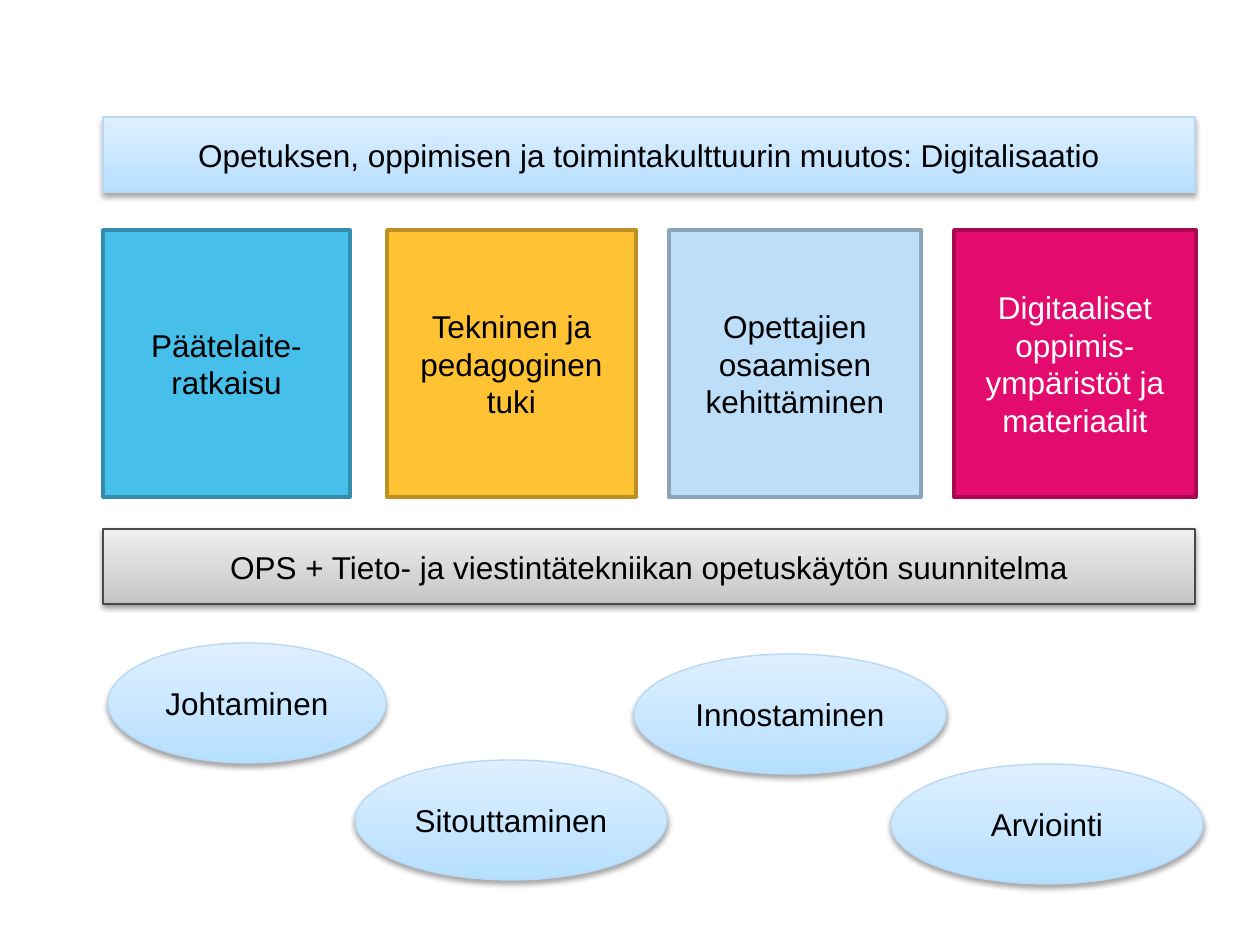
from lxml import etree
from pptx import Presentation, util as u
from pptx.dml.color import RGBColor
from pptx.enum import shapes, text
from pptx.oxml.ns import qn

PX = u.Inches(1) / 126
COLORS = {
    "black": "000000", "white": "FFFFFF",
    "ice": "DEEFFF", "sky": "B6DFFF", "sky_edge": "B7D9F4",
    "mist": "EFEFEF", "silver": "D4D4D4", "grey": "C2C2C1", "grey_edge": "494948",
    "cyan": "46BFEA", "cyan_edge": "348DAD",
    "amber": "FFC233", "amber_edge": "BD9026",
    "pale": "BDDEF8", "pale_edge": "8CA4B7",
    "pink": "E30C6E", "pink_edge": "A80951",
}
# Gradient stops run from the bottom edge upwards; shadow is (opacity %, distance pt)
BLUE = {"stops": [(0, "sky"), (100, "ice")], "edge": "sky_edge", "shadow": (35, 1.8)}
GREY = {"stops": [(0, "grey"), (35, "silver"), (100, "mist")],
        "edge": "grey_edge", "shadow": (38, 1.6)}


def px(length):
    return u.Emu(round(length * PX))


def rgb(name):
    return RGBColor.from_string(COLORS[name])


def add_color(parent, name):
    return etree.SubElement(parent, qn("a:srgbClr"), val=COLORS[name])


def add_label(page, kind, box, words, edge, edge_width, ink="black"):
    """Add an outlined shape with centred words; its fill is left to the caller."""
    shape = page.shapes.add_shape(kind, *map(px, box))
    shape.line.color.rgb = rgb(edge)
    shape.line.width = u.Pt(edge_width)
    shape.shadow.inherit = False
    shape.text_frame.vertical_anchor = text.MSO_ANCHOR.MIDDLE
    para = shape.text_frame.paragraphs[0]
    para.text = words
    para.alignment = text.PP_ALIGN.CENTER
    para.font.name = "Arial"
    para.font.size = u.Pt(18)
    para.font.color.rgb = rgb(ink)
    return shape


def add_raised(page, kind, box, words, style):
    """Add a label with a vertical gradient and a soft shadow below."""
    shape = add_label(page, kind, box, words, style["edge"], 0.75)
    shape.fill.gradient()
    shape.fill.gradient_angle = 90
    properties = shape.element.spPr
    stops = properties.find(qn("a:gradFill")).find(qn("a:gsLst"))
    for stop in list(stops):
        stops.remove(stop)
    for position, name in style["stops"]:
        add_color(etree.SubElement(stops, qn("a:gs"), pos=str(position * 1000)), name)
    opacity, distance = style["shadow"]
    shadow = etree.SubElement(
        properties.find(qn("a:effectLst")), qn("a:outerShdw"),
        blurRad=str(u.Pt(3.1)), dist=str(u.Pt(distance)),
        dir=str(90 * 60000), rotWithShape="0")
    etree.SubElement(add_color(shadow, "black"), qn("a:alpha"), val=str(opacity * 1000))


def add_banner(page, box, words, style):
    add_raised(page, shapes.MSO_SHAPE.RECTANGLE, box, words, style)


def add_pillars(page, box):
    left, top, _, height = box
    pillars = [
        (0, 247, "Päätelaite- ratkaisu", "cyan", "black"),
        (284, 249, "Tekninen ja pedagoginen tuki", "amber", "black"),
        (566, 252, "Opettajien osaamisen kehittäminen", "pale", "black"),
        (851, 242, "Digitaaliset oppimis-ympäristöt ja materiaalit", "pink", "white"),
    ]
    for offset, width, words, color, ink in pillars:
        pillar = add_label(page, shapes.MSO_SHAPE.RECTANGLE,
                           (left + offset, top, width, height),
                           words, color + "_edge", 2, ink)
        pillar.fill.solid()
        pillar.fill.fore_color.rgb = rgb(color)


def add_themes(page, box):
    left, top, _, _ = box
    themes = [
        (0, 0, 278, "Johtaminen"),
        (247, 117, 312, "Sitouttaminen"),
        (526, 11, 312, "Innostaminen"),
        (783, 121, 312, "Arviointi"),
    ]
    for across, down, width, words in themes:
        add_raised(page, shapes.MSO_SHAPE.OVAL,
                   (left + across, top + down, width, 120), words, BLUE)


def main():
    deck = Presentation()
    deck.slide_width, deck.slide_height = px(1260), px(945)
    page = deck.slides.add_slide(deck.slide_layouts[6])
    add_banner(page, (103, 117, 1092, 75),
               "Opetuksen, oppimisen ja toimintakulttuurin muutos: Digitalisaatio", BLUE)
    add_pillars(page, (103, 230, 1093, 267))
    add_banner(page, (103, 529, 1092, 75),
               "OPS + Tieto- ja viestintätekniikan opetuskäytön suunnitelma", GREY)
    add_themes(page, (108, 643, 1095, 241))
    deck.save("out.pptx")


if __name__ == "__main__":
    main()
